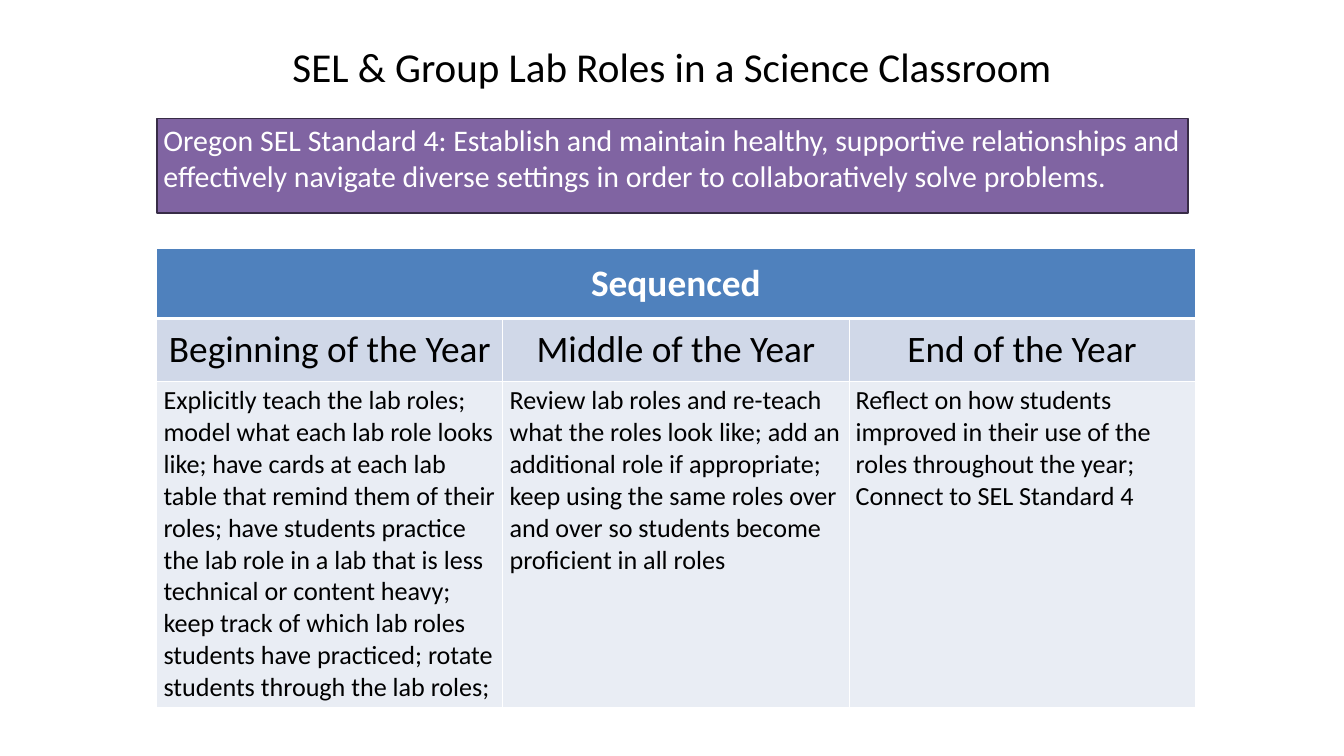
from lxml.etree import SubElement
from pptx import Presentation
from pptx.dml.color import RGBColor
from pptx.enum.shapes import MSO_SHAPE
from pptx.enum.text import MSO_ANCHOR, PP_ALIGN
from pptx.oxml.ns import qn
from pptx.util import Pt

BLACK = RGBColor(0x00, 0x00, 0x00)
WHITE = RGBColor(0xFF, 0xFF, 0xFF)
PURPLE = RGBColor(0x80, 0x64, 0xA2)
DARK_PURPLE = RGBColor(0x38, 0x2C, 0x47)
BLUE = RGBColor(0x4F, 0x81, 0xBD)
PALE_BLUE = RGBColor(0xD0, 0xD8, 0xE8)
LIGHT_BLUE = RGBColor(0xE9, 0xED, 0xF4)

FONT = "Calibri"
LEFT = Pt(168)
CONTENT_WIDTH = Pt(1105)
COLUMN_WIDTH = Pt(370.8)
ROW_HEIGHTS = [Pt(75), Pt(67), Pt(343)]

TITLE = "SEL & Group Lab Roles in a Science Classroom"
STANDARD = (
    "Oregon SEL Standard 4: Establish and maintain healthy, supportive relationships "
    "and effectively navigate diverse settings in order to collaboratively solve problems."
)
STAGES = [
    (
        "Beginning of the Year",
        "Explicitly teach the lab roles; model what each lab role looks like; have cards "
        "at each lab table that remind them of their roles; have students practice the lab "
        "role in a lab that is less technical or content heavy; keep track of which lab "
        "roles students have practiced; rotate students through the lab roles;",
    ),
    (
        "Middle of the Year",
        "Review lab roles and re-teach what the roles look like; add an additional role if "
        "appropriate; keep using the same roles over and over so students become "
        "proficient in all roles",
    ),
    (
        "End of the Year",
        "Reflect on how students improved in their use of the roles throughout the year; "
        "Connect to SEL Standard 4",
    ),
]


def write_text(text_frame, text, size, color, align=PP_ALIGN.LEFT, bold=False):
    text_frame.text = text
    text_frame.word_wrap = True
    paragraph = text_frame.paragraphs[0]
    paragraph.alignment = align
    font = paragraph.runs[0].font
    font.name = FONT
    font.size = Pt(size)
    font.bold = bold
    font.color.rgb = color


def add_title(slide):
    title = slide.shapes.title
    title.left, title.top = LEFT, Pt(26)
    title.width, title.height = CONTENT_WIDTH, Pt(90)
    write_text(title.text_frame, TITLE, 44, BLACK, PP_ALIGN.CENTER)
    title.text_frame.vertical_anchor = MSO_ANCHOR.MIDDLE


def add_standard_box(slide):
    box = slide.shapes.add_shape(
        MSO_SHAPE.RECTANGLE, LEFT, Pt(127), CONTENT_WIDTH, Pt(101.5)
    )
    box.shadow.inherit = False
    box.fill.solid()
    box.fill.fore_color.rgb = PURPLE
    box.line.color.rgb = DARK_PURPLE
    box.line.width = Pt(2)
    write_text(box.text_frame, STANDARD, 32, WHITE)
    box.text_frame.vertical_anchor = MSO_ANCHOR.TOP


def set_borders(cell, top, bottom):
    properties = cell._tc.get_or_add_tcPr()
    for side, width in (("L", 1), ("R", 1), ("T", top), ("B", bottom)):
        line = SubElement(properties, qn(f"a:ln{side}"), w=str(Pt(width)))
        fill = SubElement(line, qn("a:solidFill"))
        SubElement(fill, qn("a:srgbClr"), val=str(WHITE))


def style_cell(cell, fill, anchor, top=1, bottom=1):
    set_borders(cell, top, bottom)
    cell.fill.solid()
    cell.fill.fore_color.rgb = fill
    cell.vertical_anchor = anchor


def add_sequence_table(slide):
    table = slide.shapes.add_table(
        len(ROW_HEIGHTS), len(STAGES), LEFT, Pt(266.4),
        COLUMN_WIDTH * len(STAGES), sum(ROW_HEIGHTS),
    ).table
    for row, height in zip(table.rows, ROW_HEIGHTS):
        row.height = height

    header = table.cell(0, 0)
    header.merge(table.cell(0, len(STAGES) - 1))
    write_text(header.text_frame, "Sequenced", 40, WHITE, PP_ALIGN.CENTER, bold=True)

    for index, (stage, activities) in enumerate(STAGES):
        table.columns[index].width = COLUMN_WIDTH
        style_cell(table.cell(0, index), BLUE, MSO_ANCHOR.MIDDLE, bottom=3)
        stage_cell = table.cell(1, index)
        style_cell(stage_cell, PALE_BLUE, MSO_ANCHOR.MIDDLE, top=3)
        write_text(stage_cell.text_frame, stage, 40, BLACK, PP_ALIGN.CENTER)
        activity_cell = table.cell(2, index)
        style_cell(activity_cell, LIGHT_BLUE, MSO_ANCHOR.TOP)
        write_text(activity_cell.text_frame, activities, 28, BLACK)


def main():
    presentation = Presentation()
    presentation.slide_width = Pt(1440)
    presentation.slide_height = Pt(810)
    slide = presentation.slides.add_slide(presentation.slide_layouts[5])
    add_title(slide)
    add_standard_box(slide)
    add_sequence_table(slide)
    presentation.save("out.pptx")


if __name__ == "__main__":
    main()
